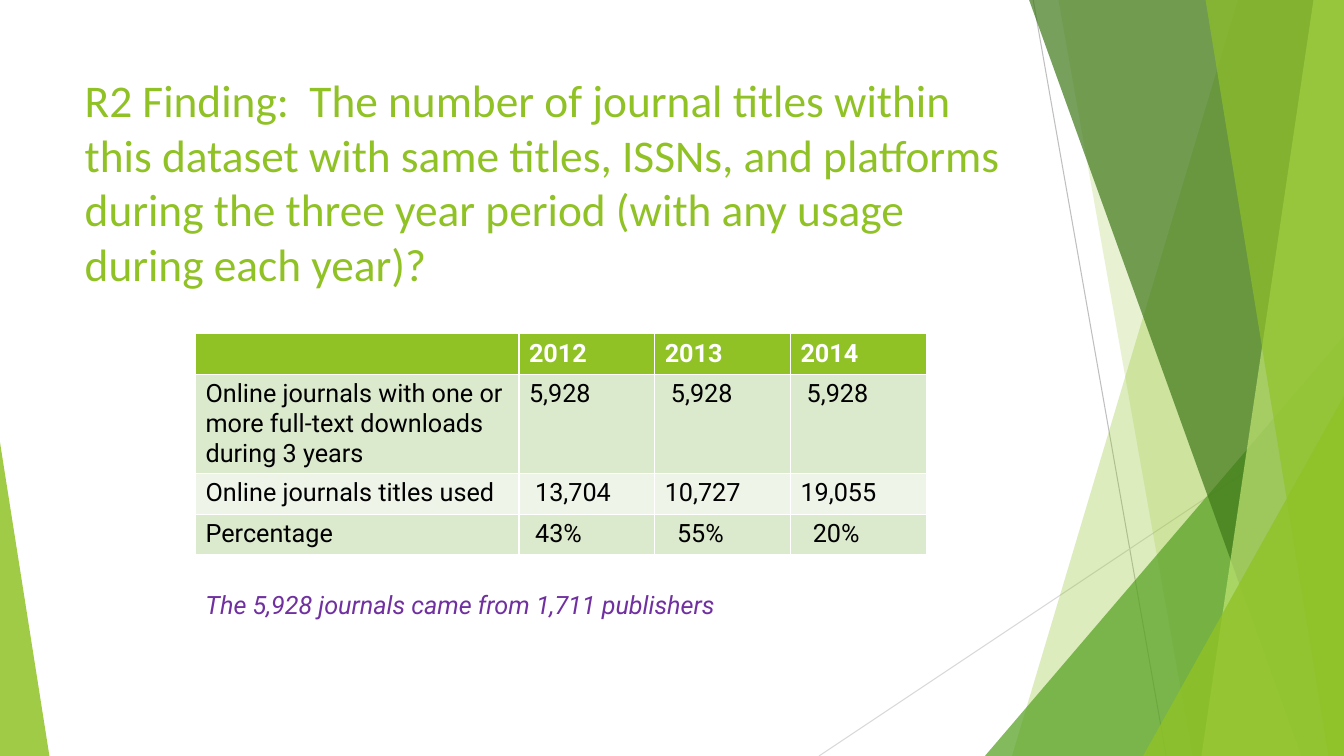
import pptx
import pptx.dml.color
import pptx.enum.shapes
import pptx.enum.text
import pptx.oxml.ns
import pptx.util
from lxml import etree

Pt = pptx.util.Pt
SHAPE = pptx.enum.shapes.MSO_SHAPE
WIDTH, HEIGHT = 960, 540
GREEN = "90C226"

TITLE = ("R2 Finding:  The number of journal titles within this dataset with same "
         "titles, ISSNs, and platforms during the three year period "
         "(with any usage during each year)?")
NOTE = "The 5,928 journals came from 1,711 publishers"

ROWS = [
    ["", "2012", "2013", "2014"],
    ["Online journals with one or more full-text downloads during 3 years",
     "5,928", "5,928", "5,928"],
    ["Online journals titles used", "13,704", "10,727", "19,055"],
    ["Percentage", "43%", "55%", "20%"],
]
INDENT_STEPS = [[0, 0, 0, 0], [0, 0, 1, 1], [0, 1, 0, 0], [0, 1, 2, 2]]
INDENT_STEP = 4.4
ROW_FILLS = [GREEN, "DBE9CD", "EEF4E8", "DBE9CD"]
ROW_HEIGHTS = [29.2, 70.2, 29.2, 29.2]
COLUMN_WIDTHS = [231, 97, 97, 97]
TABLE_LEFT, TABLE_TOP = 139.7, 238.3

# Thin lines: start, end, colour
LINES = [
    ((738, 0), (833, HEIGHT), "BFBFBF"),
    ((WIDTH, 290), (585, HEIGHT), "D9D9D9"),
]
# Facets reach the right edge: ("facet", top x, bottom x, colour, opacity)
# Wedges stand on the bottom edge: ("wedge", left, width, height, apex, colour, opacity)
DECORATION = [
    ("facet", 884.2, 722.9, GREEN, 30),
    ("facet", 756, 851.8, GREEN, 20),
    ("wedge", 703.5, 256.5, 300, 1, "54A021", 72),
    ("facet", 735.1, 929.5, "3F7819", 70),
    ("facet", 938.2, 858.2, "C0E474", 70),
    ("facet", 861.1, 949, GREEN, 65),
    ("wedge", 816.5, 143.5, 257, 1, GREEN, 80),
    ("wedge", 0, 35.3, 224, 0, GREEN, 85),
]


def color(value):
    return pptx.dml.color.RGBColor.from_string(value)


def paint(shape, value, opacity):
    shape.shadow.inherit = False
    shape.line.fill.background()
    shape.fill.solid()
    shape.fill.fore_color.rgb = color(value)
    tint = shape.fill._xPr.find(".//" + pptx.oxml.ns.qn("a:srgbClr"))
    etree.SubElement(tint, pptx.oxml.ns.qn("a:alpha"), val=str(opacity * 1000))


def style(para, size, font, value, bold=False, italic=False):
    para.font.size = Pt(size)
    para.font.name = font
    para.font.color.rgb = color(value)
    para.font.bold = bold
    para.font.italic = italic


def add_line(page, start, end, value):
    line = page.shapes.add_connector(
        pptx.enum.shapes.MSO_CONNECTOR.STRAIGHT, *map(Pt, start + end))
    line.line.color.rgb = color(value)
    line.line.width = Pt(0.75)
    etree.SubElement(line._element.spPr, pptx.oxml.ns.qn("a:effectLst"))


def add_facet(page, top_x, bottom_x, value, opacity):
    builder = page.shapes.build_freeform(Pt(top_x), 0)
    builder.add_line_segments([(Pt(WIDTH), 0), (Pt(WIDTH), Pt(HEIGHT)),
                               (Pt(bottom_x), Pt(HEIGHT))], close=True)
    paint(builder.convert_to_shape(), value, opacity)


def add_wedge(page, left, width, height, apex, value, opacity):
    wedge = page.shapes.add_shape(SHAPE.ISOSCELES_TRIANGLE, Pt(left),
                                  Pt(HEIGHT - height), Pt(width), Pt(height))
    wedge.adjustments[0] = apex
    paint(wedge, value, opacity)


def add_title(page):
    title = page.shapes.title
    title.left, title.top, title.width, title.height = map(Pt, (53.3, 48.2, 681, 114.5))
    frame = title.text_frame
    frame.text = TITLE
    frame.word_wrap = True
    frame.auto_size = pptx.enum.text.MSO_AUTO_SIZE.NONE
    frame.vertical_anchor = pptx.enum.text.MSO_ANCHOR.TOP
    para = frame.paragraphs[0]
    para.alignment = pptx.enum.text.PP_ALIGN.LEFT
    style(para, 32.4, "Calibri", GREEN)


def add_journal_table(page):
    table = page.shapes.add_table(
        len(ROWS), len(COLUMN_WIDTHS), Pt(TABLE_LEFT), Pt(TABLE_TOP),
        Pt(sum(COLUMN_WIDTHS)), Pt(sum(ROW_HEIGHTS))).table
    for column, width in zip(table.columns, COLUMN_WIDTHS):
        column.width = Pt(width)
    for r, texts in enumerate(ROWS):
        table.rows[r].height = Pt(ROW_HEIGHTS[r])
        header = r == 0
        for c, text in enumerate(texts):
            cell = table.cell(r, c)
            cell.text = text
            cell.margin_left = Pt(7.2 + INDENT_STEP * INDENT_STEPS[r][c])
            cell.fill.solid()
            cell.fill.fore_color.rgb = color(ROW_FILLS[r])
            style(cell.text_frame.paragraphs[0], 18, "Roboto",
                  "FFFFFF" if header else "000000", bold=header)


def add_note(page):
    box = page.shapes.add_textbox(Pt(TABLE_LEFT), Pt(417.6), Pt(458), Pt(29))
    box.text_frame.word_wrap = True
    box.text_frame.text = NOTE
    style(box.text_frame.paragraphs[0], 18, "Roboto", "7030A0", italic=True)


def main():
    deck = pptx.Presentation()
    deck.slide_width, deck.slide_height = Pt(WIDTH), Pt(HEIGHT)
    title_only = deck.slide_layouts[5]
    page = deck.slides.add_slide(title_only)
    for start, end, value in LINES:
        add_line(page, start, end, value)
    makers = {"facet": add_facet, "wedge": add_wedge}
    for kind, *details in DECORATION:
        makers[kind](page, *details)
    add_title(page)
    add_journal_table(page)
    add_note(page)
    deck.save("out.pptx")


if __name__ == "__main__":
    main()
